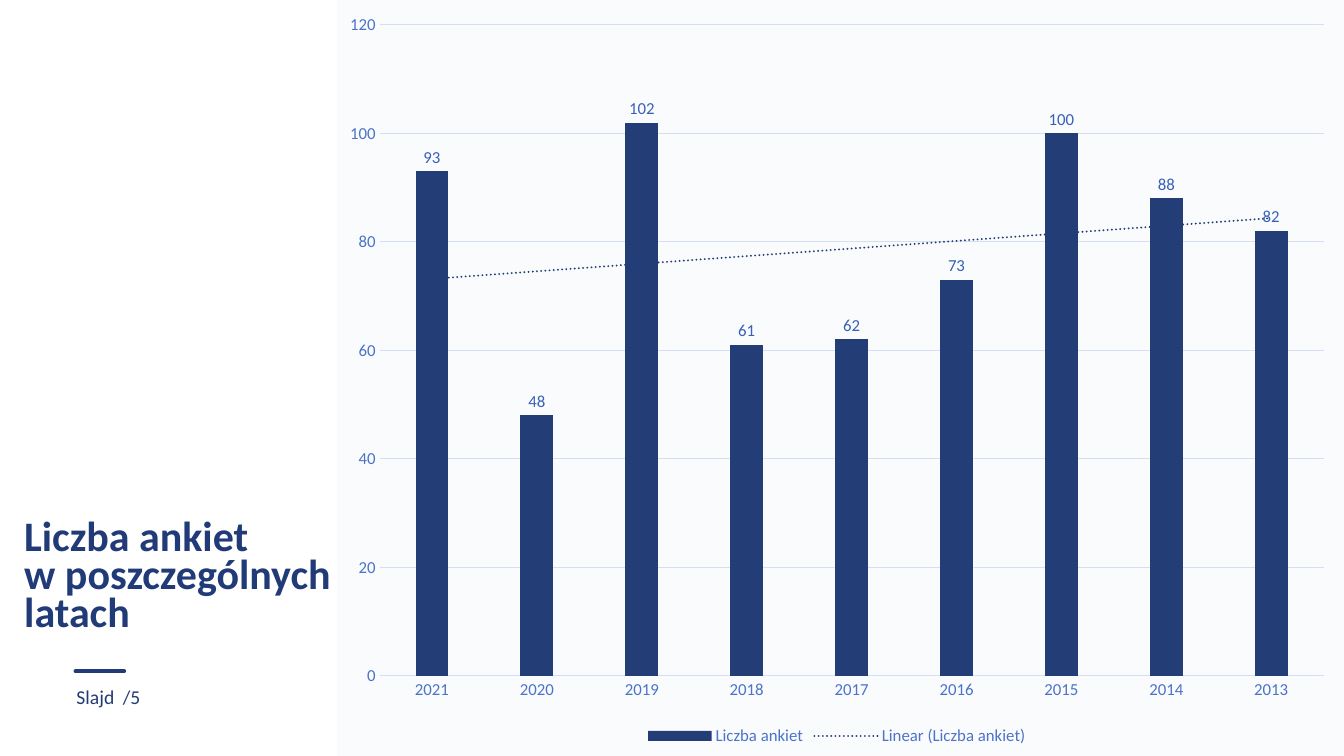
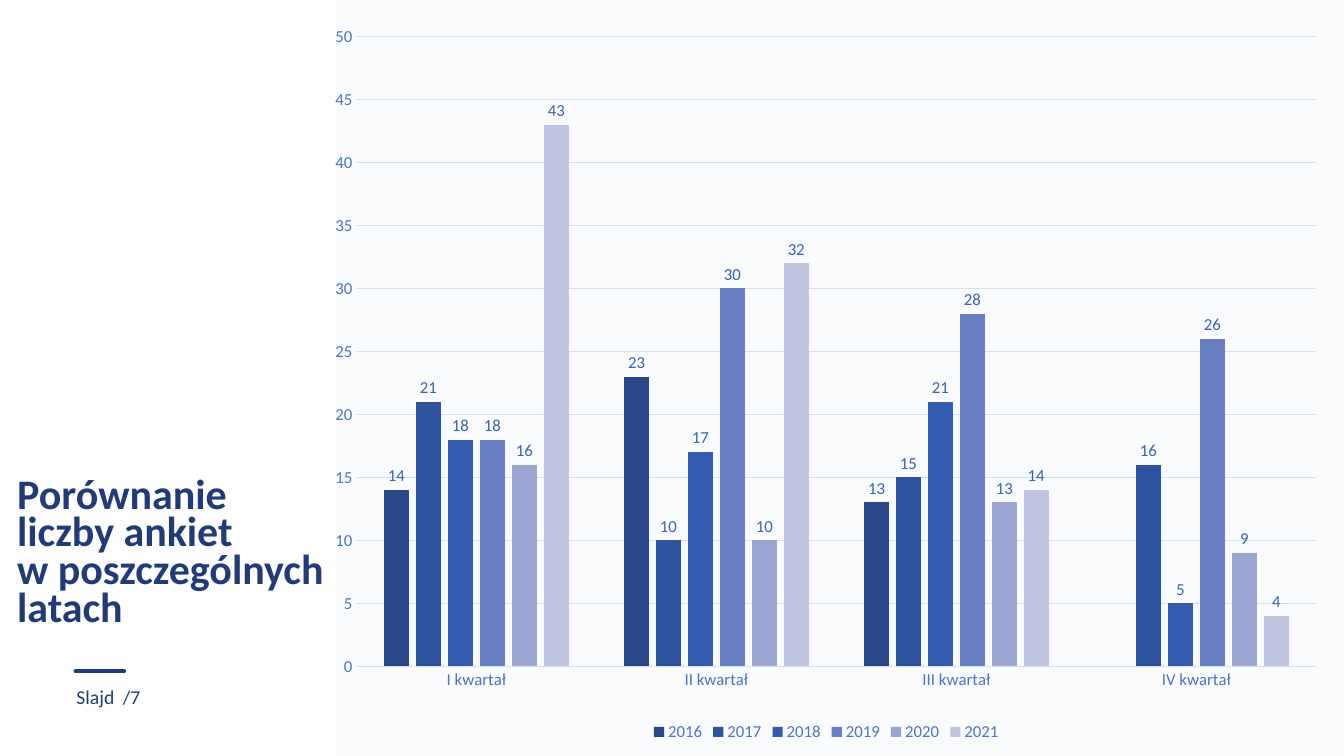
from lxml import etree
from pptx import Presentation
from pptx.chart.data import CategoryChartData
from pptx.dml.color import RGBColor
from pptx.enum import chart as ch, shapes, text as tx
from pptx.oxml import parse_xml
from pptx.oxml.ns import nsdecls, qn
from pptx.util import Inches, Pt

FONT = "Calibri"
NAVY = RGBColor(0x22, 0x3C, 0x73)
TITLE_BLUE = RGBColor(0x21, 0x3B, 0x78)
AXIS_BLUE = RGBColor(0x4A, 0x73, 0xC9)
LABEL_BLUE = RGBColor(0x37, 0x60, 0xB9)
GRID_BLUE = RGBColor(0xD5, 0xDF, 0xF3)
SURVEY_BLUE = RGBColor(0x23, 0x3D, 0x76)
YEAR_BLUES = [RGBColor.from_string(code) for code in
              ("28488A", "2E539F", "345DB2", "677EC2", "9BA7D2", "BFC5E0")]

SLIDES = [
    {
        "number": 5,
        "title": "Liczba ankiet\vw poszczególnych latach",
        "title_box": (0.14, 5.12, 3.39, 0.85),
        "chart_box": (3.27, 0, 10.06, 7.44),
        "categories": ["2021", "2020", "2019", "2018", "2017",
                       "2016", "2015", "2014", "2013"],
        "series": [("Liczba ankiet", [93, 48, 102, 61, 62, 73, 100, 88, 82])],
        "colours": [SURVEY_BLUE],
        "scale": (120, 20),
        "overlap": 0,
        "trend": True,
    },
    {
        "number": 7,
        "title": "Porównanie liczby ankiet\vw poszczególnych latach",
        "title_box": (0.07, 4.7, 3.29, 1.62),
        "chart_box": (3.13, 0.22, 10.13, 7.18),
        "categories": ["I kwartał", "II kwartał", "III kwartał", "IV kwartał"],
        "series": [
            ("2016", [14, 23, 13, None]),
            ("2017", [21, 10, 15, 16]),
            ("2018", [18, 17, 21, 5]),
            ("2019", [18, 30, 28, 26]),
            ("2020", [16, 10, 13, 9]),
            ("2021", [43, 32, 14, 4]),
        ],
        "colours": YEAR_BLUES,
        "scale": (50, 5),
        "overlap": -27,
        "plot_area": {"x": 0.04, "y": 0.02, "w": 0.94, "h": 0.87},
    },
]


def inches(box):
    return [Inches(value) for value in box]


def set_font(font, size, colour, bold=False):
    font.name = FONT
    font.size = Pt(size)
    font.bold = bold
    font.color.rgb = colour


def write(frame, text, size=14, colour=NAVY, bold=False, spacing=None,
          wrap=True, tab=None):
    frame.word_wrap = wrap
    frame.auto_size = tx.MSO_AUTO_SIZE.NONE
    frame.vertical_anchor = tx.MSO_ANCHOR.TOP
    paragraph = frame.paragraphs[0]
    paragraph.text = text
    paragraph.alignment = tx.PP_ALIGN.LEFT
    paragraph.line_spacing = spacing
    if tab:
        stops = etree.SubElement(paragraph._p.get_or_add_pPr(), qn("a:tabLst"))
        etree.SubElement(stops, qn("a:tab"), pos=str(Inches(tab)), algn="l")
    for run in paragraph.runs:
        set_font(run.font, size, colour, bold)


def add_frame(slide, number):
    """Add the pale chart panel, the short rule and the slide number."""
    panel = slide.shapes.add_shape(shapes.MSO_SHAPE.RECTANGLE,
                                   *inches((3.34, 0, 9.99, 7.5)))
    panel.shadow.inherit = False
    panel.fill.solid()
    panel.fill.fore_color.rgb = NAVY
    panel.line.fill.background()
    tint = panel._element.spPr.find(f"{qn('a:solidFill')}/{qn('a:srgbClr')}")
    etree.SubElement(tint, qn("a:alpha"), val="2000")

    rule = slide.shapes.add_connector(shapes.MSO_CONNECTOR.STRAIGHT,
                                      *inches((0.75, 6.66, 1.23, 6.66)))
    rule.line.color.rgb = TITLE_BLUE
    rule.line.width = Pt(3)
    rule.line._get_or_add_ln().set("cap", "rnd")
    etree.SubElement(rule._element.spPr, qn("a:effectLst"))

    footer = slide.shapes.add_textbox(*inches((0.66, 6.75, 1.23, 0.34)))
    write(footer.text_frame, f"Slajd\t/{number}", wrap=False, tab=0.46)


def add_trend_line(series):
    trend = parse_xml(
        f'<c:trendline {nsdecls("c", "a")}><c:spPr>'
        f'<a:ln w="{Pt(1.5)}" cap="rnd"><a:solidFill>'
        f'<a:srgbClr val="{SURVEY_BLUE}"/></a:solidFill>'
        '<a:prstDash val="sysDot"/></a:ln></c:spPr>'
        '<c:trendlineType val="linear"/><c:dispRSqr val="0"/>'
        '<c:dispEq val="0"/></c:trendline>')
    series._element.find(qn("c:cat")).addprevious(trend)


def place_plot_area(chart, fractions):
    plot_area = chart._chartSpace.chart.plotArea
    old_layout = plot_area.find(qn("c:layout"))
    if old_layout is not None:
        plot_area.remove(old_layout)
    modes = "".join(f'<c:{side}Mode val="edge"/>' for side in "xy")
    sizes = "".join(f'<c:{side} val="{value}"/>'
                    for side, value in fractions.items())
    plot_area.insert(0, parse_xml(
        f'<c:layout {nsdecls("c")}><c:manualLayout>'
        f'<c:layoutTarget val="inner"/>{modes}{sizes}'
        '</c:manualLayout></c:layout>'))


def style_axes(chart, maximum, step):
    for axis in (chart.category_axis, chart.value_axis):
        axis.major_tick_mark = axis.minor_tick_mark = ch.XL_TICK_MARK.NONE
        set_font(axis.tick_labels.font, 12, AXIS_BLUE)
    values = chart.value_axis
    values.minimum_scale, values.maximum_scale = 0, maximum
    values.major_unit = step
    values.format.line.fill.background()
    for line in (chart.category_axis.format.line,
                 values.major_gridlines.format.line):
        line.color.rgb = GRID_BLUE
        line.width = Pt(0.75)


def add_survey_chart(slide, content):
    data = CategoryChartData()
    data.categories = content["categories"]
    for name, values in content["series"]:
        data.add_series(name, values)
    chart = slide.shapes.add_chart(ch.XL_CHART_TYPE.COLUMN_CLUSTERED,
                                   *inches(content["chart_box"]), data).chart
    chart.has_title = False
    set_font(chart.font, 10, NAVY)
    chart.has_legend = True
    chart.legend.position = ch.XL_LEGEND_POSITION.BOTTOM
    chart.legend.include_in_layout = False
    set_font(chart.legend.font, 12, AXIS_BLUE)
    style_axes(chart, *content["scale"])

    plot = chart.plots[0]
    plot.vary_by_categories = False
    plot.gap_width = 219
    plot.overlap = content["overlap"]
    for series, colour in zip(plot.series, content["colours"]):
        series.format.fill.solid()
        series.format.fill.fore_color.rgb = colour
        labels = series.data_labels
        labels.show_value = True
        labels.position = ch.XL_LABEL_POSITION.OUTSIDE_END
        set_font(labels.font, 12, LABEL_BLUE)
        if content.get("trend"):
            add_trend_line(series)
    if "plot_area" in content:
        place_plot_area(chart, content["plot_area"])


def main():
    deck = Presentation()
    deck.slide_width, deck.slide_height = Inches(13.33), Inches(7.5)
    title_only = deck.slide_layouts[5]
    for content in SLIDES:
        slide = deck.slides.add_slide(title_only)
        add_frame(slide, content["number"])
        title = slide.shapes.title
        title.left, title.top, title.width, title.height = inches(
            content["title_box"])
        write(title.text_frame, content["title"], size=30, colour=TITLE_BLUE,
              bold=True, spacing=0.75)
        add_survey_chart(slide, content)
    deck.save("out.pptx")


if __name__ == "__main__":
    main()
